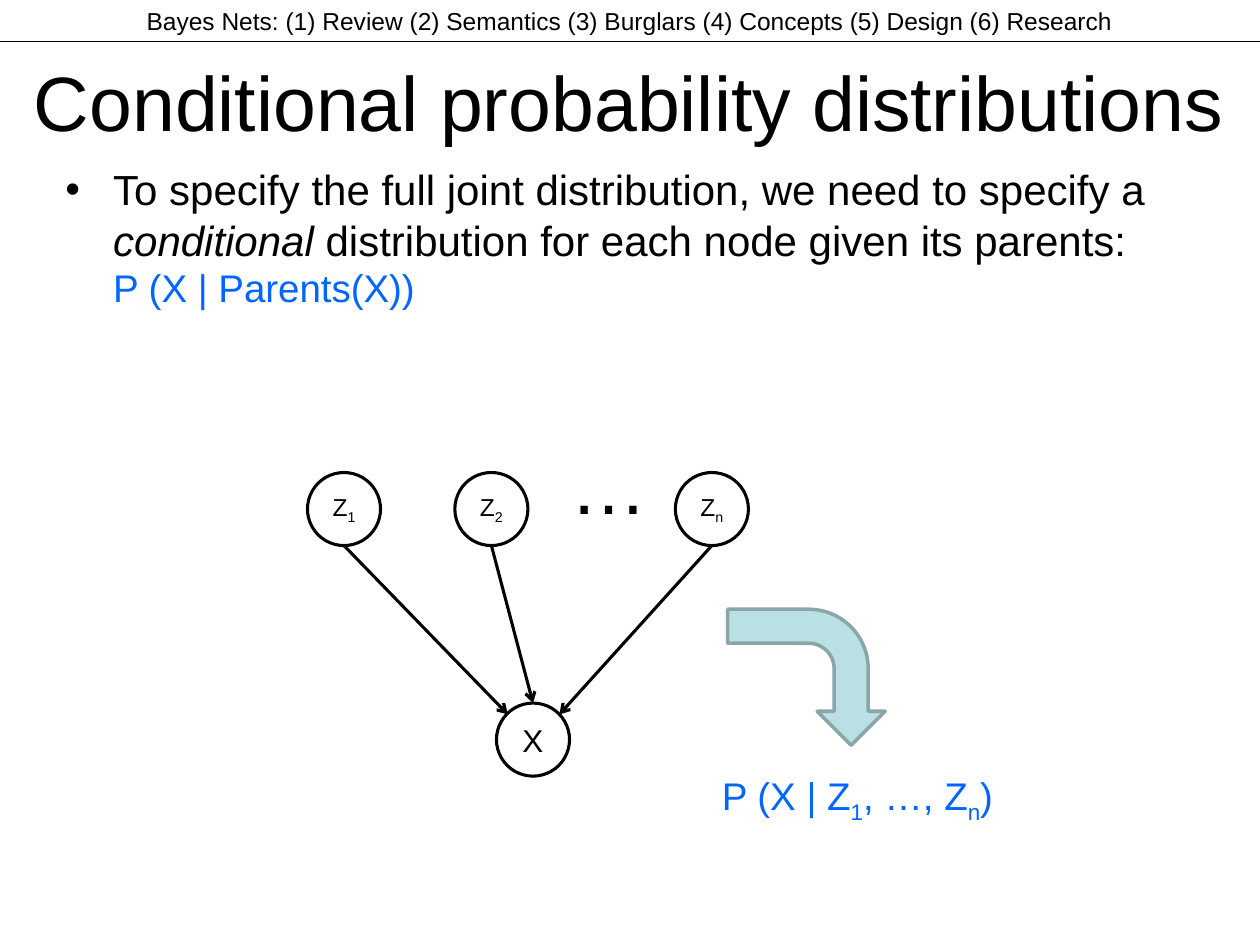
from lxml import etree
from pptx import Presentation
from pptx import util as u
from pptx.dml.color import RGBColor
from pptx.enum import shapes, text
from pptx.oxml.ns import qn

BLACK, BLUE = "000000", "0066FF"
MID = text.MSO_ANCHOR.MIDDLE
CENTER, LEFT = text.PP_ALIGN.CENTER, text.PP_ALIGN.LEFT


def rgb(code):
    """Turn a hex string into a colour."""
    return RGBColor.from_string(code)


def box(left, top, width, height):
    """Turn lengths in inches into a box."""
    return [u.Inches(n) for n in (left, top, width, height)]


def write(shape, runs, size, color=BLACK, align=CENTER, **frame):
    """Fill one paragraph with (words, style) runs and return it."""
    area = shape.text_frame
    for name, value in {"word_wrap": True, **frame}.items():
        setattr(area, name, value)
    para = area.paragraphs[0]
    para.alignment = align
    for words, style in runs:
        if words == "\n":
            para.add_line_break()
            continue
        run = para.add_run()
        run.text = words
        look = {"name": "Arial", "size": u.Pt(size), **style}
        sub = look.pop("sub", False)
        run.font.color.rgb = rgb(look.pop("color", color))
        for name, value in look.items():
            setattr(run.font, name, value)
        if sub:
            run._r.get_or_add_rPr().set("baseline", "-25000")
    return para


def label(slide, area, runs, size, **more):
    """Add a text box and return its paragraph."""
    return write(slide.shapes.add_textbox(*area), runs, size, **more)


def link(slide, start, end, width, head=False):
    """Draw a black line, with an open arrowhead if asked."""
    ends = [u.Inches(n) for n in (*start, *end)]
    line = slide.shapes.add_connector(shapes.MSO_CONNECTOR.STRAIGHT, *ends)
    line.line.color.rgb = rgb(BLACK)
    line.line.width = u.Pt(width)
    if head:
        etree.SubElement(line.line._get_or_add_ln(), qn("a:tailEnd"), type="arrow")
    etree.SubElement(line._element.spPr, qn("a:effectLst"))


def node(slide, area, runs, size):
    """Draw one circle of the net."""
    ring = slide.shapes.add_shape(shapes.MSO_SHAPE.OVAL, *area)
    ring.shadow.inherit = False
    ring.fill.background()
    ring.line.color.rgb = rgb(BLACK)
    ring.line.width = u.Pt(1.75)
    write(ring, runs, size, vertical_anchor=MID, word_wrap=False)


def header(slide, left, top, width, height):
    """Place the outline strip and its rule."""
    words = "Bayes Nets: (1) Review (2) Semantics (3) Burglars (4) Concepts (5) Design (6) Research"
    label(slide, box(left + 0.5, top, width - 1, height), [(words, {})], 14)
    link(slide, (left, top + 0.33), (left + width, top + 0.33), 0.75)


def body(slide, area):
    """Place the bulleted statement."""
    runs = [
        ("To specify the full joint distribution, we need to specify a ", {}),
        ("conditional", {"italic": True}),
        (" distribution for each node given its parents: ", {}),
        ("\n", {}),
        ("P (X | Parents(X))", {"size": u.Pt(22), "color": BLUE}),
    ]
    para = label(slide, area, runs, 24, align=LEFT)
    para.space_before = u.Pt(4.8)
    props = para._p.get_or_add_pPr()
    props.set("marL", str(u.Inches(0.38)))
    props.set("indent", str(u.Inches(-0.38)))
    etree.SubElement(props, qn("a:buFont"), typeface="Arial")
    etree.SubElement(props, qn("a:buChar"), char="•")


def net(slide, left, top, size):
    """Draw the parent nodes, the child and the arrows between them."""
    kid, floor = left + 1.5, top + 1.83
    parents = [("1", 0, (0.09, 0.09)), ("2", 1.17, (size / 2, 0)), ("n", 2.92, (0.5, 0.09))]
    for name, shift, (dx, dy) in parents:
        runs = [("Z", {}), (name, {"sub": True})]
        node(slide, box(left + shift, top, size, size), runs, 14)
        start = (left + shift + size / 2, top + size)
        link(slide, start, (kid + dx, floor + dy), 1.75, True)
    node(slide, box(kid, floor, size, size), [("X", {})], 18)
    dots = box(left + 1.99, top - 0.33, 0.82, 0.84)
    label(slide, dots, [("…", {})], 44, align=LEFT, word_wrap=False)


def result(slide, left, top):
    """Draw the bent arrow and the formula below it."""
    bend = slide.shapes.add_shape(shapes.MSO_SHAPE.BENT_ARROW, *box(left + 0.75, top, 1.08, 1.25))
    bend.rotation = 90
    bend.shadow.inherit = False
    bend.fill.solid()
    bend.fill.fore_color.rgb = rgb("BBE0E3")
    bend.line.color.rgb = rgb("8AA6A8")
    bend.line.width = u.Pt(2)
    sub = {"sub": True}
    runs = [("P (X | Z", {}), ("1", sub), (", …, Z", {}), ("n", sub), (")", {})]
    para = label(slide, box(left, top + 1.33, 2.89, 0.47), runs, 22, color=BLUE, word_wrap=False)
    para.level = 1
    para._p.get_or_add_pPr().set("marL", str(u.Inches(0.5)))
    para._p.get_or_add_pPr().set("indent", "0")


def main():
    """Build the slide and save it."""
    deck = Presentation()
    deck.slide_width, deck.slide_height = u.Inches(10), u.Inches(7.5)
    slide = deck.slides.add_slide(deck.slide_layouts[6])
    header(slide, 0, 0, 10, 0.42)
    title = [("Conditional probability distributions", {})]
    label(slide, box(0.08, 0.17, 9.83, 1.25), title, 44, vertical_anchor=MID)
    body(slide, box(0.42, 1.25, 9.17, 2.67))
    net(slide, 2.44, 3.75, 0.58)
    result(slide, 5.11, 4.75)
    deck.save("out.pptx")


if __name__ == "__main__":
    main()
